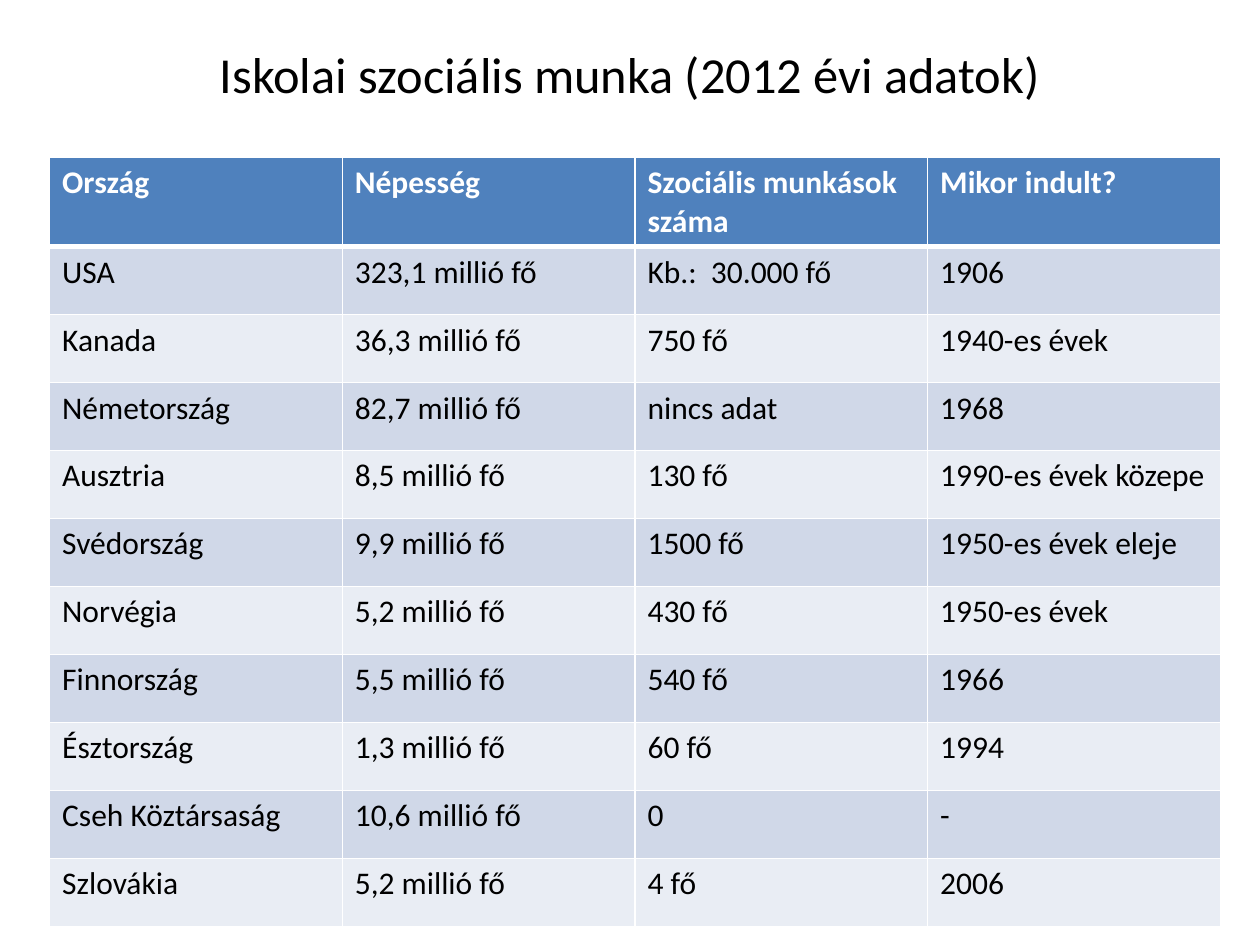
from lxml import etree
from pptx import Presentation
from pptx.dml.color import RGBColor
from pptx.enum.text import MSO_ANCHOR, PP_ALIGN
from pptx.oxml.ns import qn
from pptx.util import Cm, Pt

CENTER, LEFT = PP_ALIGN.CENTER, PP_ALIGN.LEFT
MIDDLE = MSO_ANCHOR.MIDDLE

BLACK = RGBColor(0x00, 0x00, 0x00)
WHITE = RGBColor(0xFF, 0xFF, 0xFF)
BLUE = RGBColor(0x4F, 0x81, 0xBD)
BANDS = RGBColor(0xD0, 0xD8, 0xE8), RGBColor(0xE9, 0xED, 0xF4)

TITLE = "Iskolai szociális munka (2012 évi adatok)"
HEAD = ("Ország", "Népesség", "Szociális munkások száma", "Mikor indult?")
ROWS = [
    ("USA", "323,1 millió fő", "Kb.:  30.000 fő", "1906"),
    ("Kanada", "36,3 millió fő", "750 fő", "1940-es évek"),
    ("Németország", "82,7 millió fő", "nincs adat", "1968"),
    ("Ausztria", "8,5 millió fő", "130 fő", "1990-es évek közepe"),
    ("Svédország", "9,9 millió fő", "1500 fő", "1950-es évek eleje"),
    ("Norvégia", "5,2 millió fő", "430 fő", "1950-es évek"),
    ("Finnország", "5,5 millió fő", "540 fő", "1966"),
    ("Észtország", "1,3 millió fő", "60 fő", "1994"),
    ("Cseh Köztársaság", "10,6 millió fő", "0", "-"),
    ("Szlovákia", "5,2 millió fő", "4 fő", "2006"),
]

COL_W = Cm(5.9)
HEAD_H, ROW_H = Cm(1.78), Cm(1.37)


def write(frame, text, size=18, color=BLACK, bold=False, align=LEFT):
    para = frame.paragraphs[0]
    para.alignment = align
    run = para.add_run()
    run.text = text
    font = run.font
    font.name, font.size, font.bold = "Calibri", Pt(size), bold
    font.color.rgb = color


def edge(cell, color, widths):
    """Draw cell borders; widths maps the side letters L, R, T, B to points."""
    props = cell._tc.get_or_add_tcPr()
    for i, (side, width) in enumerate(widths.items()):
        line = etree.Element(qn(f"a:ln{side}"), w=str(Pt(width)))
        fill = etree.SubElement(line, qn("a:solidFill"))
        etree.SubElement(fill, qn("a:srgbClr"), val=str(color))
        props.insert(i, line)


def add_title(slide):
    title = slide.shapes.title
    title.left, title.top = Cm(1.27), Cm(0.76)
    title.width, title.height = Cm(22.86), Cm(1.42)
    title.text_frame.vertical_anchor = MIDDLE
    write(title.text_frame, TITLE, size=28.8, align=CENTER)


def add_grid(slide):
    data = [HEAD, *ROWS]
    table = slide.shapes.add_table(
        len(data), len(HEAD), Cm(1), Cm(3.17),
        COL_W * len(HEAD), HEAD_H + ROW_H * len(ROWS)).table
    for col in table.columns:
        col.width = COL_W
    for r, texts in enumerate(data):
        head = r == 0
        table.rows[r].height = HEAD_H if head else ROW_H
        for c, text in enumerate(texts):
            cell = table.cell(r, c)
            cell.fill.solid()
            cell.fill.fore_color.rgb = BLUE if head else BANDS[(r - 1) % 2]
            write(cell.text_frame, text, bold=head,
                  color=WHITE if head else BLACK)
            edge(cell, WHITE, {"L": 1, "R": 1, "T": 3 if r == 1 else 1,
                               "B": 3 if head else 1})


def main():
    deck = Presentation()
    deck.slide_width, deck.slide_height = Cm(25.4), Cm(19.05)
    slide = deck.slides.add_slide(deck.slide_layouts[5])
    add_title(slide)
    add_grid(slide)
    deck.save("out.pptx")


if __name__ == "__main__":
    main()
